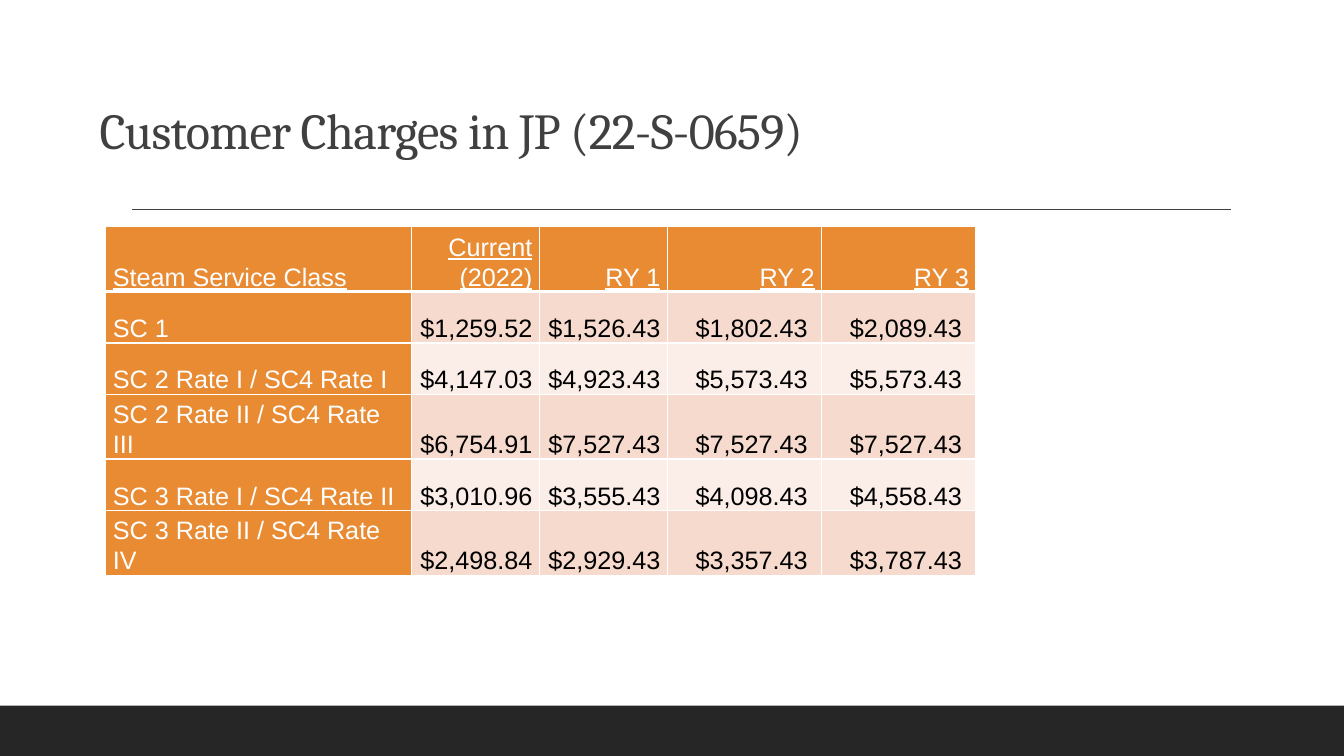
import pptx
import pptx.dml.color
import pptx.enum.shapes
import pptx.enum.text
import pptx.oxml
import pptx.oxml.ns
import pptx.util

Inches = pptx.util.Inches
Pt = pptx.util.Pt
RGBColor = pptx.dml.color.RGBColor
Align = pptx.enum.text.PP_ALIGN
Anchor = pptx.enum.text.MSO_ANCHOR

WHITE = RGBColor(0xFF, 0xFF, 0xFF)
BLACK = RGBColor(0x00, 0x00, 0x00)
CHARCOAL = RGBColor(0x26, 0x26, 0x26)
GRAY = RGBColor(0x40, 0x40, 0x40)
ORANGE = RGBColor(0xE8, 0x8B, 0x33)
PEACH = RGBColor(0xF6, 0xDA, 0xCE)
PALE_PEACH = RGBColor(0xFB, 0xEE, 0xE8)

# Trailing spaces keep the amounts slightly off the right edge
CHARGES = [
    ["Steam Service Class", "Current (2022)", "RY 1", "RY 2", "RY 3"],
    ["SC 1", "$1,259.52 ", "$1,526.43 ", "$1,802.43 ", "$2,089.43 "],
    ["SC 2 Rate I / SC4 Rate I", "$4,147.03 ", "$4,923.43 ", "$5,573.43 ", "$5,573.43 "],
    ["SC 2 Rate II / SC4 Rate III", "$6,754.91 ", "$7,527.43 ", "$7,527.43 ", "$7,527.43 "],
    ["SC 3 Rate I / SC4 Rate II", "$3,010.96 ", "$3,555.43 ", "$4,098.43 ", "$4,558.43 "],
    ["SC 3 Rate II / SC4 Rate IV", "$2,498.84 ", "$2,929.43 ", "$3,357.43 ", "$3,787.43 "],
]
COLUMN_WIDTHS = [3.03, 1.27, 1.27, 1.53, 1.53]
ROW_HEIGHT = 0.51


def apply(target, values):
    for name, value in values.items():
        setattr(target, name, value)


class ChargesSlide:
    title_font = {"name": "Cambria", "size": Pt(36)}
    table_font = {"name": "Arial", "size": Pt(18)}
    cell_format = {
        "margin_left": Inches(0.07), "margin_right": Inches(0.07),
        "margin_top": 0, "margin_bottom": 0, "vertical_anchor": Anchor.BOTTOM,
    }

    def __init__(self, deck):
        self.page = deck.slides.add_slide(deck.slide_layouts[6])

    def add_text(self, frame, text, font, color, paragraph):
        para = frame.paragraphs[0]
        apply(para, paragraph)
        span = para.add_run()
        span.text = text
        apply(span.font, font)
        span.font.color.rgb = color
        return span

    def band(self, left, top, width, height, color):
        bar = self.page.shapes.add_shape(
            pptx.enum.shapes.MSO_SHAPE.RECTANGLE,
            Inches(left), Inches(top), Inches(width), Inches(height))
        bar.shadow.inherit = False
        bar.fill.solid()
        bar.fill.fore_color.rgb = color
        bar.line.fill.background()

    def rule(self, left, right, top, color):
        line = self.page.shapes.add_connector(
            pptx.enum.shapes.MSO_CONNECTOR.STRAIGHT,
            Inches(left), Inches(top), Inches(right), Inches(top))
        line.line.color.rgb = color
        line.line.width = Pt(1)
        properties = line._element.spPr
        properties.append(properties.makeelement(pptx.oxml.ns.qn("a:effectLst"), {}))

    def title(self, left, top, width, height, text):
        box = self.page.shapes.add_textbox(
            Inches(left), Inches(top), Inches(width), Inches(height))
        apply(box.text_frame, {"word_wrap": True, "vertical_anchor": Anchor.BOTTOM})
        span = self.add_text(box.text_frame, text, self.title_font, GRAY,
                             {"line_spacing": 0.9})
        span._r.get_or_add_rPr().set("spc", "-50")

    def borders(self, cell, bottom):
        properties = cell._tc.get_or_add_tcPr()
        for side, points in {"L": 1, "R": 1, "T": 1, "B": bottom}.items():
            properties.append(pptx.oxml.parse_xml(
                f'<a:ln{side} {pptx.oxml.ns.nsdecls("a")} w="{Pt(points)}">'
                f'<a:solidFill><a:srgbClr val="{WHITE}"/></a:solidFill></a:ln{side}>'))

    def table(self, left, top, rows, widths, row_height):
        table = self.page.shapes.add_table(
            len(rows), len(widths), Inches(left), Inches(top),
            Inches(sum(widths)), Inches(row_height * len(rows))).table
        apply(table, {"first_row": False, "horz_banding": False})
        for column, width in zip(table.columns, widths):
            column.width = Inches(width)
        for row_index, row in enumerate(rows):
            table.rows[row_index].height = Inches(row_height)
            for column_index, text in enumerate(row):
                header = row_index == 0
                heading = header or column_index == 0
                cell = table.cell(row_index, column_index)
                apply(cell, self.cell_format)
                self.borders(cell, 3 if header else 1)
                cell.fill.solid()
                stripe = PEACH if row_index % 2 else PALE_PEACH
                cell.fill.fore_color.rgb = ORANGE if heading else stripe
                self.add_text(cell.text_frame, text,
                              {**self.table_font, "bold": False, "underline": header},
                              WHITE if heading else BLACK,
                              {"alignment": Align.RIGHT if column_index else Align.LEFT,
                               "line_spacing": 1.07})


def main():
    deck = pptx.Presentation()
    apply(deck, {"slide_width": Inches(13.33), "slide_height": Inches(7.5)})
    slide = ChargesSlide(deck)

    # Footer band and title rule
    slide.band(0, 7, 13.33, 0.5, CHARCOAL)
    slide.rule(1.31, 12.21, 2.08, GRAY)

    # Title and table of charges
    slide.title(0.89, 0.8, 11.6, 0.84, "Customer Charges in JP (22-S-0659)")
    slide.table(1.05, 2.25, CHARGES, COLUMN_WIDTHS, ROW_HEIGHT)

    deck.save("out.pptx")


if __name__ == "__main__":
    main()
